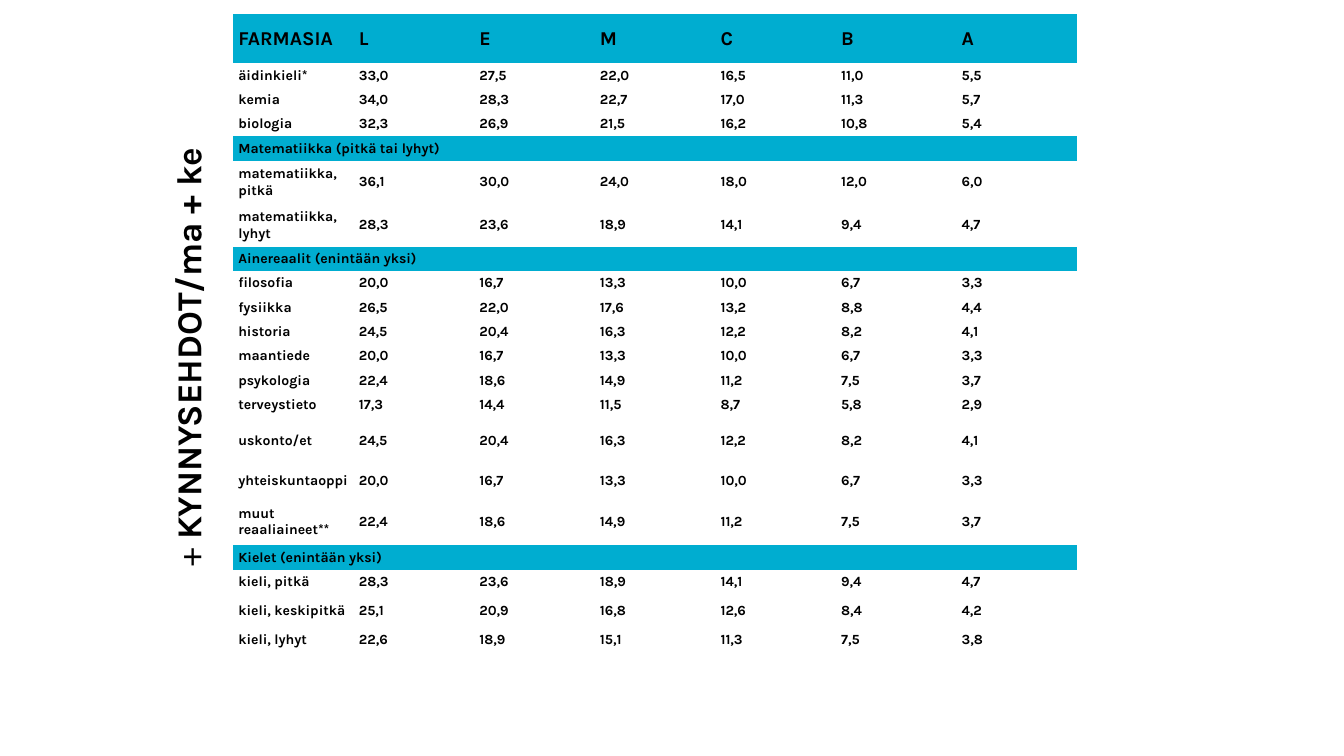
"""Builds the slide with the pharmacy admission points table."""
import pptx
import pptx.dml.color
import pptx.enum.text
import pptx.oxml.ns
import pptx.util

GRADES = "FARMASIA L E M C B A".split()
TITLE = [("+ ", False), ("KYNNYSEHDOT/ma + ke", True)]
SECTIONS = [
    (None, [
        ("äidinkieli*", "33,0 27,5 22,0 16,5 11,0 5,5", "line"),
        ("kemia", "34,0 28,3 22,7 17,0 11,3 5,7", "line"),
        ("biologia", "32,3 26,9 21,5 16,2 10,8 5,4", "line"),
    ]),
    ("Matematiikka (pitkä tai lyhyt)", [
        ("matematiikka, pitkä", "36,1 30,0 24,0 18,0 12,0 6,0", "double"),
        ("matematiikka, lyhyt", "28,3 23,6 18,9 14,1 9,4 4,7", "double"),
    ]),
    ("Ainereaalit (enintään yksi)", [
        ("filosofia", "20,0 16,7 13,3 10,0 6,7 3,3", "line"),
        ("fysiikka", "26,5 22,0 17,6 13,2 8,8 4,4", "line"),
        ("historia", "24,5 20,4 16,3 12,2 8,2 4,1", "line"),
        ("maantiede", "20,0 16,7 13,3 10,0 6,7 3,3", "line"),
        ("psykologia", "22,4 18,6 14,9 11,2 7,5 3,7", "line"),
        ("terveystieto", "17,3 14,4 11,5 8,7 5,8 2,9", "line"),
        ("uskonto/et", "24,5 20,4 16,3 12,2 8,2 4,1", "tall"),
        ("yhteiskuntaoppi", "20,0 16,7 13,3 10,0 6,7 3,3", "loose"),
        ("muut reaaliaineet**", "22,4 18,6 14,9 11,2 7,5 3,7", "tall"),
    ]),
    ("Kielet (enintään yksi)", [
        ("kieli, pitkä", "28,3 23,6 18,9 14,1 9,4 4,7", "line"),
        ("kieli, keskipitkä", "25,1 20,9 16,8 12,6 8,4 4,2", "loose"),
        ("kieli, lyhyt", "22,6 18,9 15,1 11,3 7,5 3,8", "line"),
    ]),
]
ROW_POINTS = {"header": 35.2, "line": 17.4, "double": 30.8, "tall": 33.8, "loose": 23.9}
THEME = {
    "font": "Karla",
    "ink": pptx.dml.color.RGBColor.from_string("000000"),
    "band": pptx.dml.color.RGBColor.from_string("00ADD0"),
    "title": 25, "header": 14, "body": 10,
    "plain_table": "{2D5ABB26-0587-4C30-8999-92F81FD0307C}",
}
Inches, Pt = pptx.util.Inches, pptx.util.Pt
ANCHOR = pptx.enum.text.MSO_ANCHOR


def add_span(para, text, size, bold=True):
    span = para.add_run()
    span.text = text
    span.font.name = THEME["font"]
    span.font.size = Pt(size)
    span.font.bold = bold
    span.font.color.rgb = THEME["ink"]


def fill_cell(cell, text, size, banded):
    cell.vertical_anchor = ANCHOR.MIDDLE
    cell.margin_left = Pt(3.9)
    cell.margin_right = Pt(2)
    cell.margin_top = cell.margin_bottom = Pt(1.9)
    if banded:
        cell.fill.solid()
        cell.fill.fore_color.rgb = THEME["band"]
    else:
        cell.fill.background()
    if text:
        add_span(cell.text_frame.paragraphs[0], text, size)


def table_rows():
    yield GRADES, "header", True
    for heading, subjects in SECTIONS:
        if heading:
            yield [heading] + [""] * (len(GRADES) - 1), "line", True
        for subject, points, height in subjects:
            yield [subject] + points.split(), height, False


def add_points_table(page):
    rows = list(table_rows())
    heights = [Pt(ROW_POINTS[height]) for _, height, _ in rows]
    frame = page.shapes.add_table(len(rows), len(GRADES), Inches(2.31), Inches(0.14),
                                  Inches(8.37), sum(heights))
    table = frame.table
    table.first_row = table.horz_banding = False
    style = table._tbl.tblPr.find(pptx.oxml.ns.qn("a:tableStyleId"))
    style.text = THEME["plain_table"]
    for index, (texts, height, banded) in enumerate(rows):
        table.rows[index].height = heights[index]
        size = THEME["header" if height == "header" else "body"]
        for column, text in enumerate(texts):
            fill_cell(table.cell(index, column), text, size, banded)
        if banded and height != "header":
            table.cell(index, 0).merge(table.cell(index, len(GRADES) - 1))


def add_side_title(page):
    box = page.shapes.add_textbox(Inches(1.6), Inches(1.15), Inches(0.62), Inches(4.57))
    frame = box.text_frame
    frame.word_wrap = True
    frame.vertical_anchor = ANCHOR.TOP
    frame._txBody.bodyPr.set("vert", "vert270")
    for text, bold in TITLE:
        add_span(frame.paragraphs[0], text, THEME["title"], bold)


def main():
    deck = pptx.Presentation()
    deck.slide_width, deck.slide_height = Inches(13.33), Inches(7.5)
    page = deck.slides.add_slide(deck.slide_layouts[6])
    add_points_table(page)
    add_side_title(page)
    deck.save("out.pptx")


if __name__ == "__main__":
    main()
